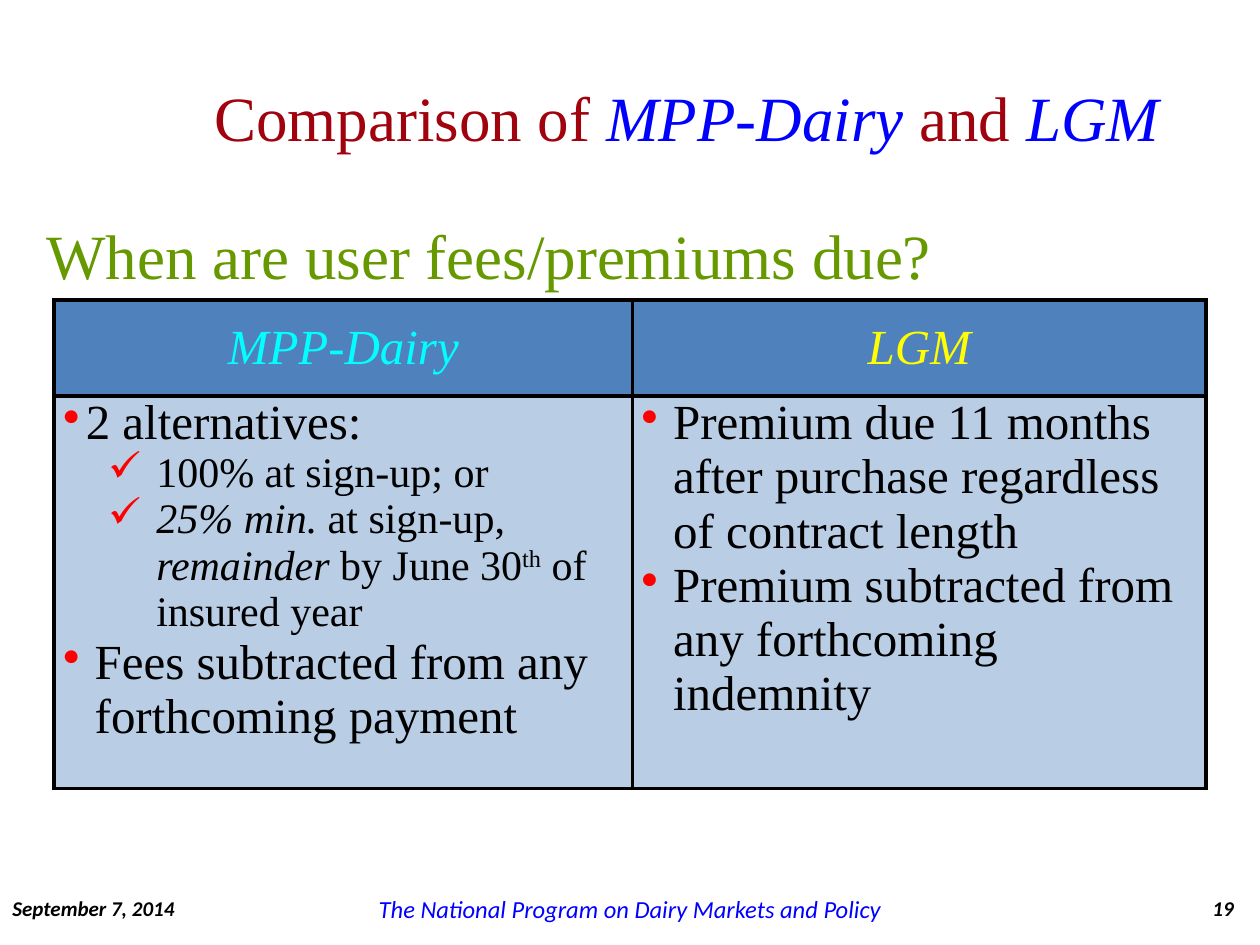
from dataclasses import dataclass

from lxml import etree
from pptx import Presentation
from pptx.dml.color import RGBColor
from pptx.enum.text import MSO_ANCHOR, PP_ALIGN
from pptx.oxml.ns import qn
from pptx.util import Cm, Pt

LEFT, CENTER, RIGHT = PP_ALIGN.LEFT, PP_ALIGN.CENTER, PP_ALIGN.RIGHT
TOP, MIDDLE = MSO_ANCHOR.TOP, MSO_ANCHOR.MIDDLE
TITLE_ONLY = 5


@dataclass(frozen=True)
class Theme:
    serif: str = "Times New Roman"
    sans: str = "Calibri"
    black: str = "000000"
    maroon: str = "A0020E"
    blue: str = "0000FF"
    green: str = "669900"
    aqua: str = "00FFFF"
    yellow: str = "FFFF00"
    red: str = "FF0000"
    head: str = "4F81BD"
    body: str = "B9CDE5"
    title: int = 36
    large: int = 28
    small: int = 24
    foot: int = 14
    note: int = 12
    border: float = 2.25


T = Theme()


def add_run(para, text, size, color, face=T.serif, bold=False, italic=False, raised=False):
    run = para.add_run()
    run.text = text
    font = run.font
    font.name, font.size = face, Pt(size)
    font.bold, font.italic = bold, italic
    font.color.rgb = RGBColor.from_string(color)
    if raised:
        run._r.get_or_add_rPr().set("baseline", "30000")


def add_child(node, tag, **attrs):
    return etree.SubElement(node, qn(tag), attrs)


def add_color(node, color):
    add_child(node, "a:srgbClr", val=color)


def set_bullet(para, mark, indent, hang):
    props = para._p.get_or_add_pPr()
    props.set("marL", str(Cm(indent)))
    props.set("indent", str(-Cm(hang)))
    add_color(add_child(props, "a:buClr"), T.red)
    add_child(props, "a:buChar", char=mark)


def style_cell(cell, fill, anchor):
    cell.margin_left = cell.margin_right = Cm(0.18)
    cell.margin_top = cell.margin_bottom = 0
    cell.vertical_anchor = anchor
    props = cell._tc.get_or_add_tcPr()
    for side in "LRTB":
        line = add_child(props, f"a:ln{side}", w=str(Pt(T.border)))
        add_color(add_child(line, "a:solidFill"), T.black)
    cell.fill.solid()
    cell.fill.fore_color.rgb = RGBColor.from_string(fill)


def fill_list(cell, items):
    """Each item is (mark, indent, hang, size, runs); a run is (text, style)."""
    frame = cell.text_frame
    for i, (mark, indent, hang, size, runs) in enumerate(items):
        para = frame.add_paragraph() if i else frame.paragraphs[0]
        set_bullet(para, mark, indent, hang)
        for text, style in runs:
            add_run(para, text, size, T.black, **style)


def place_title(slide, left, top, width, height):
    shape = slide.shapes.title
    shape.left, shape.top, shape.width, shape.height = map(Cm, (left, top, width, height))
    shape.text_frame.vertical_anchor = MIDDLE
    para = shape.text_frame.paragraphs[0]
    para.alignment = CENTER
    for text, named in (("Comparison of ", False), ("MPP-Dairy ", True),
                        ("and ", False), ("LGM", True)):
        add_run(para, text, T.title, T.blue if named else T.maroon, italic=named)


def place_text(slide, box, text, size, color, align=LEFT, anchor=MIDDLE, wrap=True, **style):
    frame = slide.shapes.add_textbox(*map(Cm, box)).text_frame
    frame.word_wrap, frame.vertical_anchor = wrap, anchor
    para = frame.paragraphs[0]
    para.alignment = align
    add_run(para, text, size, color, **style)


def place_table(slide, left, top, cols, rows):
    box = map(Cm, (left, top, sum(cols), sum(rows)))
    table = slide.shapes.add_table(len(rows), len(cols), *box).table
    for col, width in zip(table.columns, cols):
        col.width = Cm(width)
    for row, height in zip(table.rows, rows):
        row.height = Cm(height)

    plain, slant = {}, {"italic": True}
    tick = ("✓", 1.88, 0.97, T.small)
    dot = ("•", 0.64, 0.64, T.large)
    dairy = [
        ("•", 0.46, 0.46, T.large, [("2 alternatives:", plain)]),
        (*tick, [("100% at sign-up; or", plain)]),
        (*tick, [("25% min. ", slant), ("at sign-up, ", plain), ("remainder", slant),
                 (" by June 30", plain), ("th", {"raised": True}),
                 (" of insured year", plain)]),
        (*dot, [("Fees subtracted from any forthcoming payment", plain)]),
    ]
    margin = [
        (*dot, [("Premium due 11 months after purchase regardless of contract length", plain)]),
        (*dot, [("Premium subtracted from any forthcoming indemnity", plain)]),
    ]
    plans = (("MPP-Dairy", T.aqua, dairy), ("LGM", T.yellow, margin))
    for i, (name, color, items) in enumerate(plans):
        head, body = table.cell(0, i), table.cell(1, i)
        style_cell(head, T.head, MIDDLE)
        style_cell(body, T.body, TOP)
        para = head.text_frame.paragraphs[0]
        para.alignment = CENTER
        add_run(para, name, T.large, color, italic=True)
        fill_list(body, items)


def place_footer(slide, top, height):
    note = {"face": T.sans, "bold": True, "italic": True}
    place_text(slide, (0, top, 3.89, height), "September 7, 2014", T.note, T.black, **note)
    place_text(slide, (7.32, top, 10.77, height),
               "The National Program on Dairy Markets and Policy",
               T.foot, T.blue, CENTER, face=T.sans, italic=True)
    place_text(slide, (23.14, top, 1.98, height), "19", T.note, T.black, RIGHT, **note)


def main():
    deck = Presentation()
    deck.slide_width, deck.slide_height = Cm(25.4), Cm(19.05)
    slide = deck.slides.add_slide(deck.slide_layouts[TITLE_ONLY])
    place_title(slide, 3.56, 0.76, 20.57, 3.18)
    place_table(slide, 1.09, 6.05, (11.66, 11.56), (1.93, 7.92))
    place_text(slide, (0.69, 4.24, 18.54, 1.8), "When are user fees/premiums due?",
               T.title, T.green, anchor=TOP, wrap=False)
    place_footer(slide, 18.01, 0.61)
    deck.save("out.pptx")


if __name__ == "__main__":
    main()
